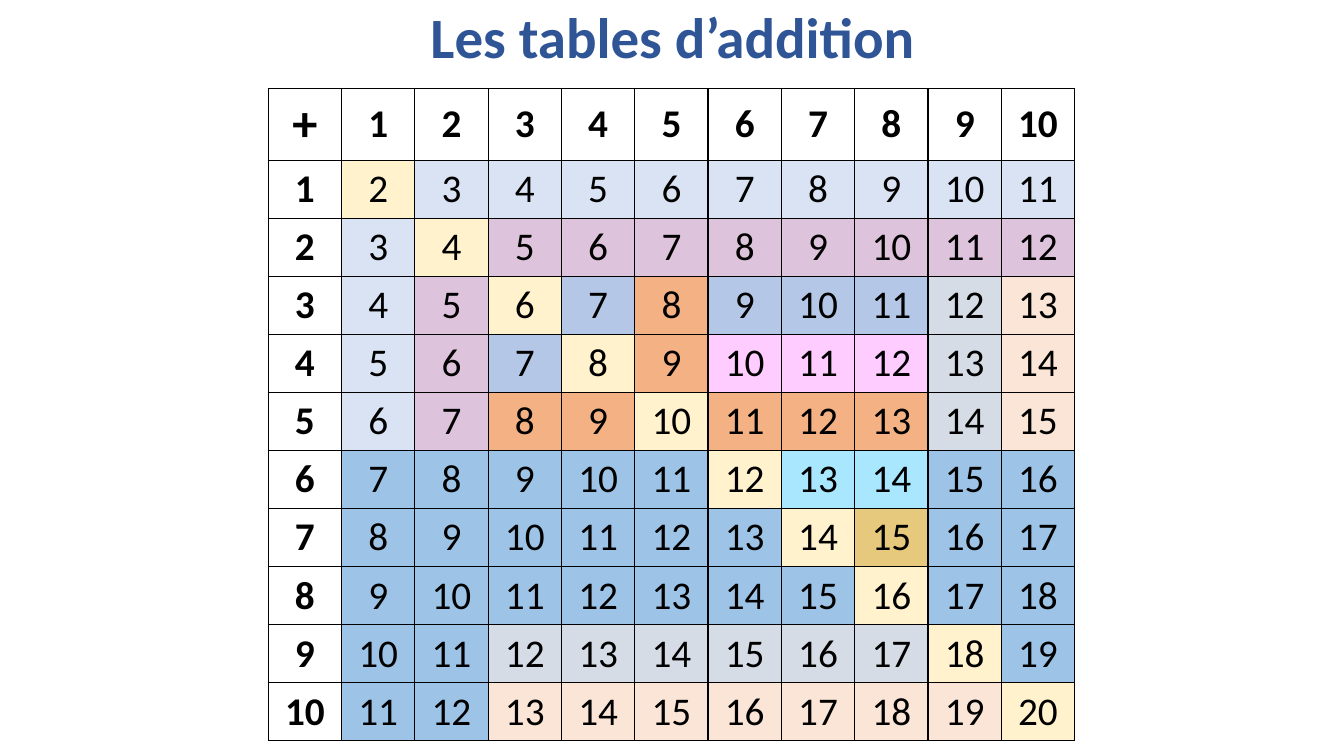
from lxml.etree import SubElement
from pptx import Presentation
from pptx.dml.color import RGBColor
from pptx.enum.text import MSO_ANCHOR, PP_ALIGN
from pptx.oxml.ns import qn
from pptx.util import Inches, Pt

TITLE = "Les tables d’addition"
COUNT = 10
FONT = "Calibri"

BLACK = RGBColor(0x00, 0x00, 0x00)
WHITE = RGBColor(0xFF, 0xFF, 0xFF)
NAVY = RGBColor(0x2F, 0x55, 0x97)
CREAM = RGBColor(0xFF, 0xF2, 0xCC)
SKY = RGBColor(0x9D, 0xC3, 0xE6)

# The first number found among a cell's two addends gives its fill.
FILLS = {
    1: RGBColor(0xDA, 0xE3, 0xF3),
    2: RGBColor(0xDE, 0xC3, 0xDC),
    10: RGBColor(0xFB, 0xE5, 0xD6),
    9: RGBColor(0xD6, 0xDC, 0xE5),
    5: RGBColor(0xF4, 0xB1, 0x83),
    3: RGBColor(0xB4, 0xC7, 0xE7),
    4: RGBColor(0xFF, 0xCC, 0xFF),
    6: RGBColor(0xA8, 0xE7, 0xFE),
    7: RGBColor(0xE7, 0xC9, 0x7D),
}

TITLE_BOX = (0.92, 0.08, 11.5, 0.67)
GRID_BOX = (2.66, 0.88, 8, 6.4)
HEAD_H, ROW_H = 0.7, 0.57

TITLE_FONT = {"name": FONT, "size": Pt(40.7), "bold": True}
PLUS_FONT = {"name": FONT, "size": Pt(36), "bold": True}
HEAD_FONT = {"name": FONT, "size": Pt(28), "bold": True}
SUM_FONT = {"name": FONT, "size": Pt(28), "bold": False}


def write(frame, text, style, color):
    para = frame.paragraphs[0]
    para.alignment = PP_ALIGN.CENTER
    run = para.add_run()
    run.text = text
    for key, value in style.items():
        setattr(run.font, key, value)
    run.font.color.rgb = color
    return para


def border(cell):
    props = cell._tc.get_or_add_tcPr()
    for side in ("lnL", "lnR", "lnT", "lnB"):
        line = SubElement(props, qn(f"a:{side}"), w=str(Pt(1)))
        fill = SubElement(line, qn("a:solidFill"))
        SubElement(fill, qn("a:srgbClr"), val=str(BLACK))


def pick_fill(row, col):
    if 0 in (row, col):
        return WHITE
    if row == col:
        return CREAM
    key = next(num for num in FILLS if num in (row, col))
    # The lower part of column 3 has its own blue.
    return SKY if key == col and row > 5 else FILLS[key]


def pick_text(row, col):
    if row == col == 0:
        return "+", PLUS_FONT
    return str(row + col), HEAD_FONT if 0 in (row, col) else SUM_FONT


def add_title(slide):
    frame = slide.shapes.add_textbox(*map(Inches, TITLE_BOX)).text_frame
    frame.word_wrap = True
    frame.vertical_anchor = MSO_ANCHOR.MIDDLE
    write(frame, TITLE, TITLE_FONT, NAVY).line_spacing = 0.8


def add_grid(slide):
    size = COUNT + 1
    table = slide.shapes.add_table(size, size, *map(Inches, GRID_BOX)).table
    table.horz_banding = False
    for num in range(size):
        table.columns[num].width = Inches(GRID_BOX[2] / size)
        table.rows[num].height = Inches(ROW_H if num else HEAD_H)
    for row in range(size):
        for col in range(size):
            cell = table.cell(row, col)
            border(cell)
            cell.fill.solid()
            cell.fill.fore_color.rgb = pick_fill(row, col)
            cell.vertical_anchor = MSO_ANCHOR.MIDDLE
            write(cell.text_frame, *pick_text(row, col), BLACK)


def main():
    deck = Presentation()
    deck.slide_width, deck.slide_height = Inches(13.33), Inches(7.5)
    slide = deck.slides.add_slide(deck.slide_layouts[6])
    add_grid(slide)
    add_title(slide)
    deck.save("out.pptx")


if __name__ == "__main__":
    main()
